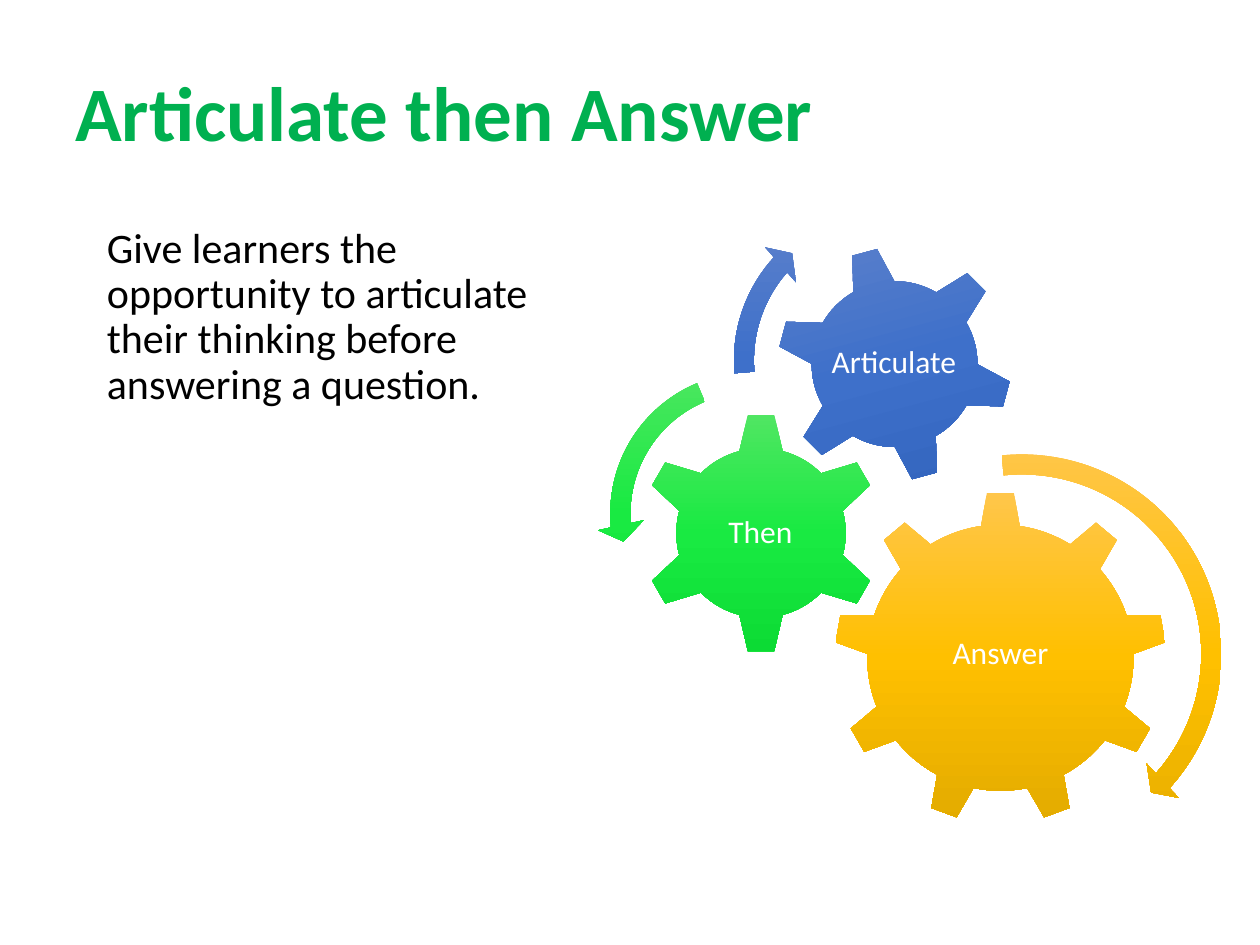
from copy import deepcopy

from pptx import Presentation
from pptx.dml.color import RGBColor
from pptx.enum.shapes import MSO_SHAPE
from pptx.enum.text import MSO_ANCHOR, PP_ALIGN
from pptx.util import Inches, Pt

GEAR_6 = MSO_SHAPE.GEAR_6
GEAR_9 = MSO_SHAPE.GEAR_9
CIRCULAR_ARROW = MSO_SHAPE.CIRCULAR_ARROW
LEFT_CIRCULAR_ARROW = MSO_SHAPE.LEFT_CIRCULAR_ARROW
TOP = MSO_ANCHOR.TOP
MIDDLE = MSO_ANCHOR.MIDDLE
LEFT = PP_ALIGN.LEFT
CENTER = PP_ALIGN.CENTER

TITLE_GREEN = RGBColor(0x00, 0xB0, 0x50)
BLACK = RGBColor(0x00, 0x00, 0x00)
WHITE = RGBColor(0xFF, 0xFF, 0xFF)
GOLD = (RGBColor(0xFF, 0xC6, 0x4B), RGBColor(0xFF, 0xC0, 0x00), RGBColor(0xE3, 0xAB, 0x00))
GREEN = (RGBColor(0x51, 0xE6, 0x63), RGBColor(0x19, 0xEA, 0x42), RGBColor(0x0C, 0xDB, 0x34))
BLUE = (RGBColor(0x61, 0x83, 0xCB), RGBColor(0x3E, 0x70, 0xCA), RGBColor(0x30, 0x62, 0xBB))

GEARS = [
    (GEAR_9, 6.62, 3.9, 2.64, 0, GOLD, "Answer", (7.15, 4.51, 1.58, 1.36)),
    (GEAR_6, 5.08, 3.27, 1.92, 0, GREEN, "Then", (5.56, 3.76, 0.95, 0.95)),
    (GEAR_6, 6.16, 1.95, 1.88, 345, BLUE, "Articulate", (6.57, 2.36, 1.05, 1.05)),
]
ARROWS = [
    (CIRCULAR_ARROW, 6.42, 3.5, 3.38, GOLD, (0.047, 2.99, 25.206, 158.518, 0.055)),
    (LEFT_CIRCULAR_ARROW, 4.74, 2.85, 2.45, GREEN, (0.065, 4.3, 104.891, 148.378, 0.075)),
    (CIRCULAR_ARROW, 5.72, 1.54, 2.64, BLUE, (0.06, 3.941, 133.138, 105.082, 0.07)),
]


class SlideBuilder:
    font = "Calibri"
    line_spacing = 0.9

    def __init__(self, slide):
        self.slide = slide

    def text(self, box, words, size, color, bold=False, anchor=TOP, align=LEFT,
             inset=None, wrap=True, indent=0, space_before=0):
        shape = self.slide.shapes.add_textbox(*map(Inches, box))
        frame = shape.text_frame
        frame.word_wrap = wrap
        frame.vertical_anchor = anchor
        if inset is not None:
            frame.margin_left = frame.margin_right = Inches(inset)
            frame.margin_top = frame.margin_bottom = Inches(inset)
        paragraph = frame.paragraphs[0]
        paragraph.alignment = align
        paragraph.line_spacing = self.line_spacing
        paragraph.space_before = Pt(space_before)
        if indent:
            paragraph._p.get_or_add_pPr().set("marL", str(Inches(indent)))
        run = paragraph.add_run()
        run.text = words
        run.font.name = self.font
        run.font.size = Pt(size)
        run.font.bold = bold
        run.font.color.rgb = color

    def gradient_shape(self, kind, left, top, size, colors):
        shape = self.slide.shapes.add_shape(
            kind, Inches(left), Inches(top), Inches(size), Inches(size))
        shape.shadow.inherit = False
        shape.line.fill.background()
        shape.fill.gradient()
        shape.fill.gradient_angle = 270
        first_stop = shape._element.spPr.xpath("a:gradFill/a:gsLst/a:gs")[0]
        first_stop.addnext(deepcopy(first_stop))
        for stop, position, color in zip(shape.fill.gradient_stops, (0, 0.5, 1), colors):
            stop.position = position
            stop.color.rgb = color
        return shape

    def gear(self, kind, left, top, size, rotation, colors, label, label_box):
        shape = self.gradient_shape(kind, left, top, size, colors)
        shape.rotation = rotation
        self.text(label_box, label, 18, WHITE, anchor=MIDDLE, align=CENTER,
                  inset=0.03, wrap=False)

    def curved_arrow(self, kind, left, top, size, colors, adjustments):
        shape = self.gradient_shape(kind, left, top, size, colors)
        for index, value in enumerate(adjustments):
            shape.adjustments[index] = value


def main():
    presentation = Presentation()
    presentation.slide_width = Inches(10)
    presentation.slide_height = Inches(7.5)
    builder = SlideBuilder(presentation.slides.add_slide(presentation.slide_layouts[6]))

    builder.text((0.5, 0.3, 9, 1.25), "Articulate then Answer", 44, TITLE_GREEN,
                 bold=True, anchor=MIDDLE)
    builder.text((0.5, 1.75, 4.42, 4.95),
                 "Give learners the opportunity to articulate their thinking "
                 "before answering a question.",
                 24, BLACK, indent=0.25, space_before=10)
    for gear in GEARS:
        builder.gear(*gear)
    for arrow in ARROWS:
        builder.curved_arrow(*arrow)

    presentation.save("out.pptx")


if __name__ == "__main__":
    main()
